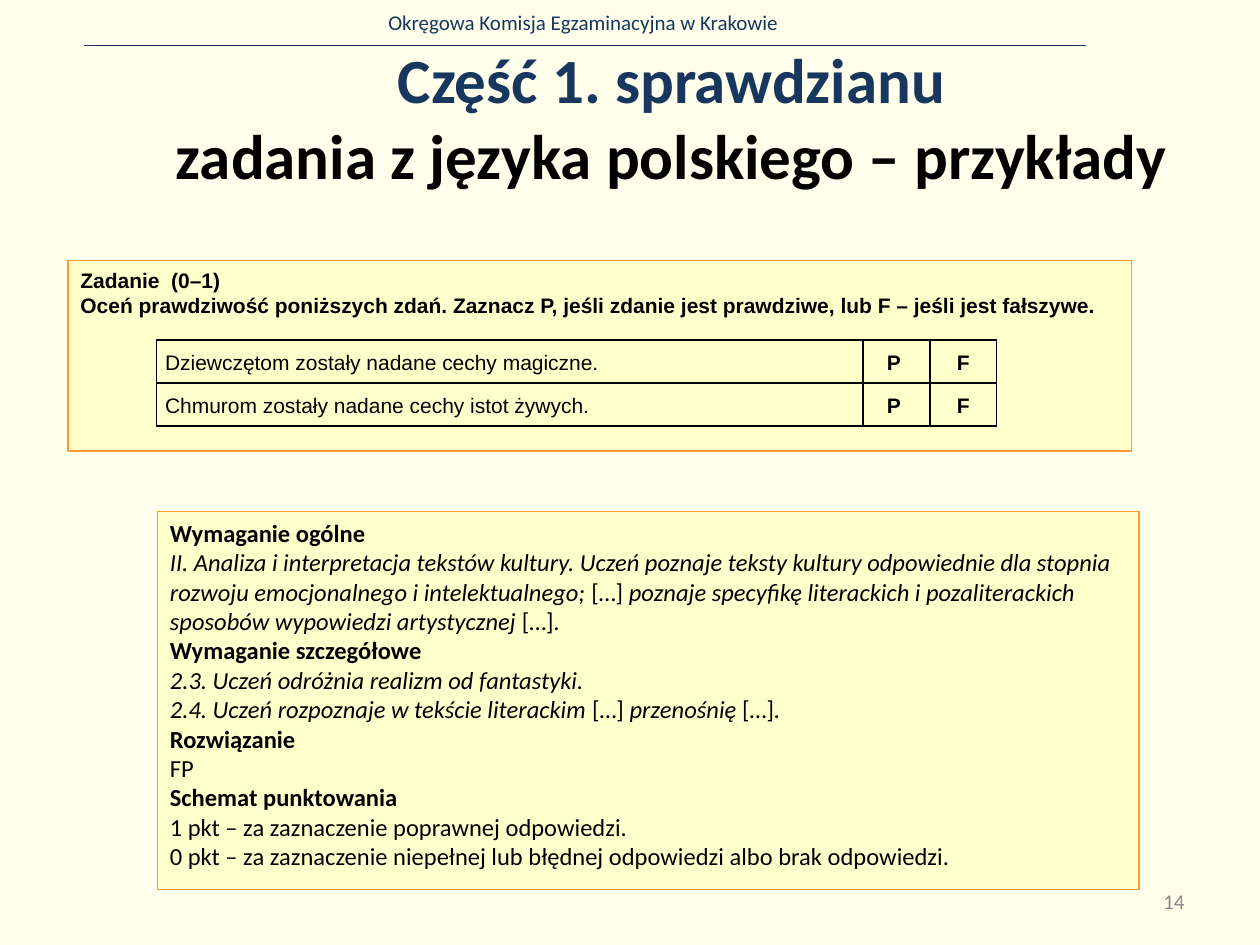
import pptx
import pptx.util
import pptx.dml.color
import pptx.enum.shapes
import pptx.enum.text
import pptx.oxml
import pptx.oxml.ns
from pptx.util import Inches, Pt

ALIGN = pptx.enum.text.PP_ALIGN
ANCHOR = pptx.enum.text.MSO_ANCHOR
NAVY, BLACK, CREAM, ORANGE, GREY = "17375E", "000000", "FFFFCC", "FF9933", "898989"


def rgb(value):
    return pptx.dml.color.RGBColor.from_string(value)


def set_font(p, name, size, color=BLACK, bold=None):
    p.font.name, p.font.size, p.font.bold = name, Pt(size), bold
    p.font.color.rgb = rgb(color)


prs = pptx.Presentation()
prs.slide_width, prs.slide_height = Inches(10), Inches(7.5)
s = prs.slides.add_slide(prs.slide_layouts[5])
s.background.fill.solid()
s.background.fill.fore_color.rgb = rgb("FFFFEB")

# Header and slide number
for text, box, size, color, align, anchor in [
    ("Okręgowa Komisja Egzaminacyjna w Krakowie", (0.26, 0.03, 8.74, 0.3),
     12, NAVY, ALIGN.CENTER, ANCHOR.TOP),
    ("14", (7.17, 6.95, 2.33, 0.4), 12, GREY, ALIGN.RIGHT, ANCHOR.MIDDLE),
]:
    tf = s.shapes.add_textbox(*map(Inches, box)).text_frame
    tf.word_wrap, tf.vertical_anchor = True, anchor
    p = tf.paragraphs[0]
    p.text, p.alignment = text, align
    set_font(p, "Calibri", size, color)

# Rule under the header
rule = s.shapes.add_connector(pptx.enum.shapes.MSO_CONNECTOR.STRAIGHT,
                              Inches(0.67), Inches(0.36), Inches(8.62), Inches(0.36))
rule.line.color.rgb, rule.line.width = rgb(NAVY), Pt(0.5)
rule._element.spPr.append(pptx.oxml.parse_xml(
    f'<a:effectLst {pptx.oxml.ns.nsdecls("a")}/>'))

# Title
title = s.shapes.title
title.left, title.top, title.width, title.height = map(Inches, (1.23, 0.3, 8.2, 1.25))
tf = title.text_frame
tf.auto_size, tf.vertical_anchor = pptx.enum.text.MSO_AUTO_SIZE.NONE, ANCHOR.MIDDLE
p = tf.paragraphs[0]
p.alignment = ALIGN.CENTER
set_font(p, "Calibri", 36, BLACK, True)
r = p.add_run()
r.text = "Część 1. sprawdzianu"
r.font.color.rgb = rgb(NAVY)
p.add_line_break()
p.add_run().text = "zadania z języka polskiego – przykłady"

# Task and requirements panels: each paragraph is a list of (text, style) runs
task = [
    [("Zadanie  (0–1)", "b")],
    [("Oceń prawdziwość poniższych zdań. Zaznacz P, jeśli zdanie jest prawdziwe, "
      "lub F – jeśli jest fałszywe.", "b")],
]
requirements = [
    [("Wymaganie ogólne", "b")],
    [("II. Analiza i interpretacja tekstów kultury. Uczeń poznaje teksty kultury "
      "odpowiednie dla stopnia rozwoju emocjonalnego i intelektualnego; ", "i"),
     ("[…]", ""),
     (" poznaje specyfikę literackich i pozaliterackich sposobów wypowiedzi "
      "artystycznej ", "i"), ("[…]", ""), (".", "i")],
    [("Wymaganie szczegółowe", "b")],
    [("2.3. Uczeń odróżnia realizm od fantastyki.", "i")],
    [("2.4. Uczeń rozpoznaje w tekście literackim ", "i"), ("[…]", ""),
     (" przenośnię ", "i"), ("[…]", ""), (".", "i")],
    [("Rozwiązanie", "b")],
    [("FP", "")],
    [("Schemat punktowania", "b")],
    [("1 pkt – za zaznaczenie poprawnej odpowiedzi.", "")],
    [("0 pkt – za zaznaczenie niepełnej lub błędnej odpowiedzi albo brak odpowiedzi.", "")],
]
for box, font, size, paragraphs in [
    ((0.54, 2.07, 8.44, 1.51), "Arial", 12, task),
    ((1.25, 4.06, 7.79, 3), "Calibri", 14, requirements),
]:
    sp = s.shapes.add_shape(pptx.enum.shapes.MSO_SHAPE.RECTANGLE, *map(Inches, box))
    sp.shadow.inherit = False
    sp.fill.solid()
    sp.fill.fore_color.rgb = rgb(CREAM)
    sp.line.color.rgb, sp.line.width = rgb(ORANGE), Pt(0.75)
    tf = sp.text_frame
    tf.word_wrap, tf.vertical_anchor = True, ANCHOR.TOP
    for i, runs in enumerate(paragraphs):
        p = tf.add_paragraph() if i else tf.paragraphs[0]
        p.alignment = ALIGN.LEFT
        set_font(p, font, size)
        for text, style in runs:
            r = p.add_run()
            r.text = text
            r.font.bold, r.font.italic = style == "b", style == "i"

# True/false table
statements = ["Dziewczętom zostały nadane cechy magiczne.",
              "Chmurom zostały nadane cechy istot żywych."]
table = s.shapes.add_table(2, 3, Inches(1.24), Inches(2.7), Inches(6.67), Inches(0.68)).table
table.first_row = table.horz_banding = False
for column, width in zip(table.columns, (5.61, 0.53, 0.53)):
    column.width = Inches(width)
for row, statement in zip(table.rows, statements):
    row.height = Inches(0.34)
    for j, (cell, text) in enumerate(zip(row.cells, (statement, "P ", "F"))):
        cell.margin_left = cell.margin_right = Inches(0.07)
        cell.margin_top = cell.margin_bottom = 0
        cell.vertical_anchor = ANCHOR.MIDDLE
        p = cell.text_frame.paragraphs[0]
        p.text, p.line_spacing = text, 1.15
        p.alignment = ALIGN.CENTER if j else ALIGN.LEFT
        set_font(p, "Arial", 12, BLACK, j > 0)
        tcPr = cell._tc.get_or_add_tcPr()
        for side in ("lnL", "lnR", "lnT", "lnB"):
            tcPr.append(pptx.oxml.parse_xml(
                f'<a:{side} {pptx.oxml.ns.nsdecls("a")} w="{Pt(1)}"><a:solidFill>'
                f'<a:srgbClr val="{BLACK}"/></a:solidFill></a:{side}>'))
        cell.fill.background()

prs.save("out.pptx")
